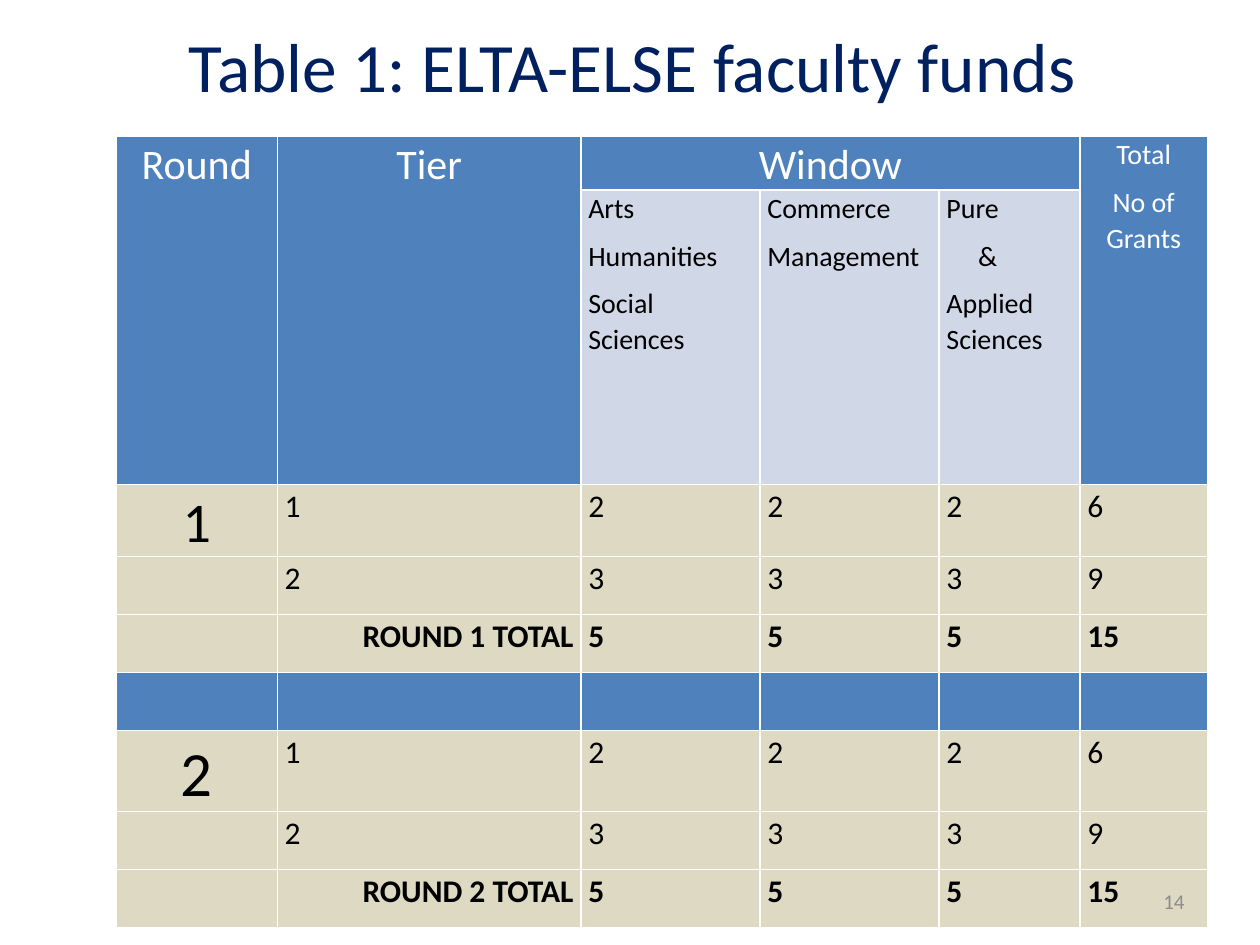
from dataclasses import dataclass

from lxml.etree import SubElement
from pptx import Presentation
from pptx.dml.color import RGBColor
from pptx.enum.text import MSO_ANCHOR, PP_ALIGN
from pptx.oxml.ns import qn
from pptx.util import Cm, Pt


@dataclass(frozen=True)
class Theme:
    font: str = "Calibri"
    navy: str = "002060"
    blue: str = "4F81BD"
    pale_blue: str = "D0D8E8"
    sand: str = "DDD9C3"
    white: str = "FFFFFF"
    black: str = "000000"
    grey: str = "8C8C8C"
    title_size: float = 39.6
    heading_size: int = 24
    subheading_size: int = 16
    body_size: int = 18
    page_size: int = 12


THEME = Theme()
COLUMN_WIDTHS = (3.25, 6.12, 3.61, 3.61, 2.84, 2.57)
ROW_HEIGHTS = (0.97, 5.94) + (1.17,) * 7
HEADINGS = {0: ["Round"], 1: ["Tier"], 2: ["Window"], 5: ["Total", "No of Grants"]}
WINDOWS = {
    2: ["Arts", "Humanities", "Social Sciences"],
    3: ["Commerce", "Management"],
    4: ["Pure", "&", "Applied Sciences"],
}
AMPERSAND_INDENT = Cm(0.64)
TIERS = (("1", "2", "2", "2", "6"), ("2", "3", "3", "3", "9"))
TOTALS = ("5", "5", "5", "15")
# Round number, its type size and its first table row
ROUNDS = ((1, 32, 2), (2, 36, 6))
SEPARATOR_ROW = 5


def write_paragraph(paragraph, text, size, color, align=PP_ALIGN.LEFT, bold=False):
    paragraph.alignment = align
    run = paragraph.add_run()
    run.text = text
    font_format = {"name": THEME.font, "size": Pt(size), "bold": bold}
    for attribute, value in font_format.items():
        setattr(run.font, attribute, value)
    run.font.color.rgb = RGBColor.from_string(color)


def add_label(slide, box, text, size, color, align):
    frame = slide.shapes.add_textbox(*map(Cm, box)).text_frame
    frame.word_wrap = True
    frame.vertical_anchor = MSO_ANCHOR.MIDDLE
    write_paragraph(frame.paragraphs[0], text, size, color, align)


def style_cell(cell, fill):
    """Give a cell its insets, thin white borders and fill."""
    margins = {"margin_left": Cm(0.15), "margin_right": Cm(0.15),
               "margin_top": 0, "margin_bottom": 0}
    for attribute, value in margins.items():
        setattr(cell, attribute, value)
    properties = cell._tc.get_or_add_tcPr()
    for side in ("a:lnL", "a:lnR", "a:lnT", "a:lnB"):
        border = SubElement(properties, qn(side), w=str(Pt(1)))
        SubElement(SubElement(border, qn("a:solidFill")), qn("a:srgbClr"), val=THEME.white)
    cell.fill.solid()
    cell.fill.fore_color.rgb = RGBColor.from_string(fill)


def write_cell(cell, lines, size=THEME.body_size, color=THEME.black, **text_format):
    frame = cell.text_frame
    for index, line in enumerate(lines):
        paragraph = frame.add_paragraph() if index else frame.paragraphs[0]
        paragraph.line_spacing = 1.07
        paragraph.space_before = Pt(6)
        write_paragraph(paragraph, line, size, color, **text_format)


def row_fill(row, column):
    if row == 1 and column in WINDOWS:
        return THEME.pale_blue
    return THEME.blue if row < 2 or row == SEPARATOR_ROW else THEME.sand


def add_grid(slide):
    """Add the empty, styled table with its merged headings."""
    table = slide.shapes.add_table(
        len(ROW_HEIGHTS), len(COLUMN_WIDTHS), Cm(2.34), Cm(2.74),
        Cm(sum(COLUMN_WIDTHS)), Cm(sum(ROW_HEIGHTS))).table
    table.first_row = table.horz_banding = False
    for column, width in zip(table.columns, COLUMN_WIDTHS):
        column.width = Cm(width)
    for row, height in zip(table.rows, ROW_HEIGHTS):
        row.height = Cm(height)
    for row in range(len(ROW_HEIGHTS)):
        for column in range(len(COLUMN_WIDTHS)):
            style_cell(table.cell(row, column), row_fill(row, column))
    for column in (0, 1, 5):
        table.cell(0, column).merge(table.cell(1, column))
    table.cell(0, 2).merge(table.cell(0, 4))
    return table


def fill_headings(table):
    for column, lines in HEADINGS.items():
        size = THEME.subheading_size if len(lines) > 1 else THEME.heading_size
        write_cell(table.cell(0, column), lines, size, THEME.white, align=PP_ALIGN.CENTER)
    for column, lines in WINDOWS.items():
        write_cell(table.cell(1, column), lines, THEME.subheading_size)
    ampersand = table.cell(1, 4).text_frame.paragraphs[1]
    ampersand._p.get_or_add_pPr().set("marL", str(AMPERSAND_INDENT))


def fill_round(table, number, size, first_row):
    write_cell(table.cell(first_row, 0), [str(number)], size, align=PP_ALIGN.CENTER)
    for row, grants in enumerate(TIERS, first_row):
        for column, value in enumerate(grants, 1):
            write_cell(table.cell(row, column), [value])
    total_row = first_row + len(TIERS)
    write_cell(table.cell(total_row, 1), [f"ROUND {number} TOTAL"],
               align=PP_ALIGN.RIGHT, bold=True)
    for column, value in enumerate(TOTALS, 2):
        write_cell(table.cell(total_row, column), [value], bold=True)


def main():
    presentation = Presentation()
    presentation.slide_width, presentation.slide_height = Cm(25.4), Cm(19.05)
    slide = presentation.slides.add_slide(presentation.slide_layouts[6])
    add_label(slide, (1.8, 0.43, 21.9, 1.75), "Table 1: ELTA-ELSE faculty funds",
              THEME.title_size, THEME.navy, PP_ALIGN.CENTER)
    table = add_grid(slide)
    fill_headings(table)
    for number, size, first_row in ROUNDS:
        fill_round(table, number, size, first_row)
    add_label(slide, (18.21, 17.65, 5.92, 1.02), "14",
              THEME.page_size, THEME.grey, PP_ALIGN.RIGHT)
    presentation.save("out.pptx")


if __name__ == "__main__":
    main()
